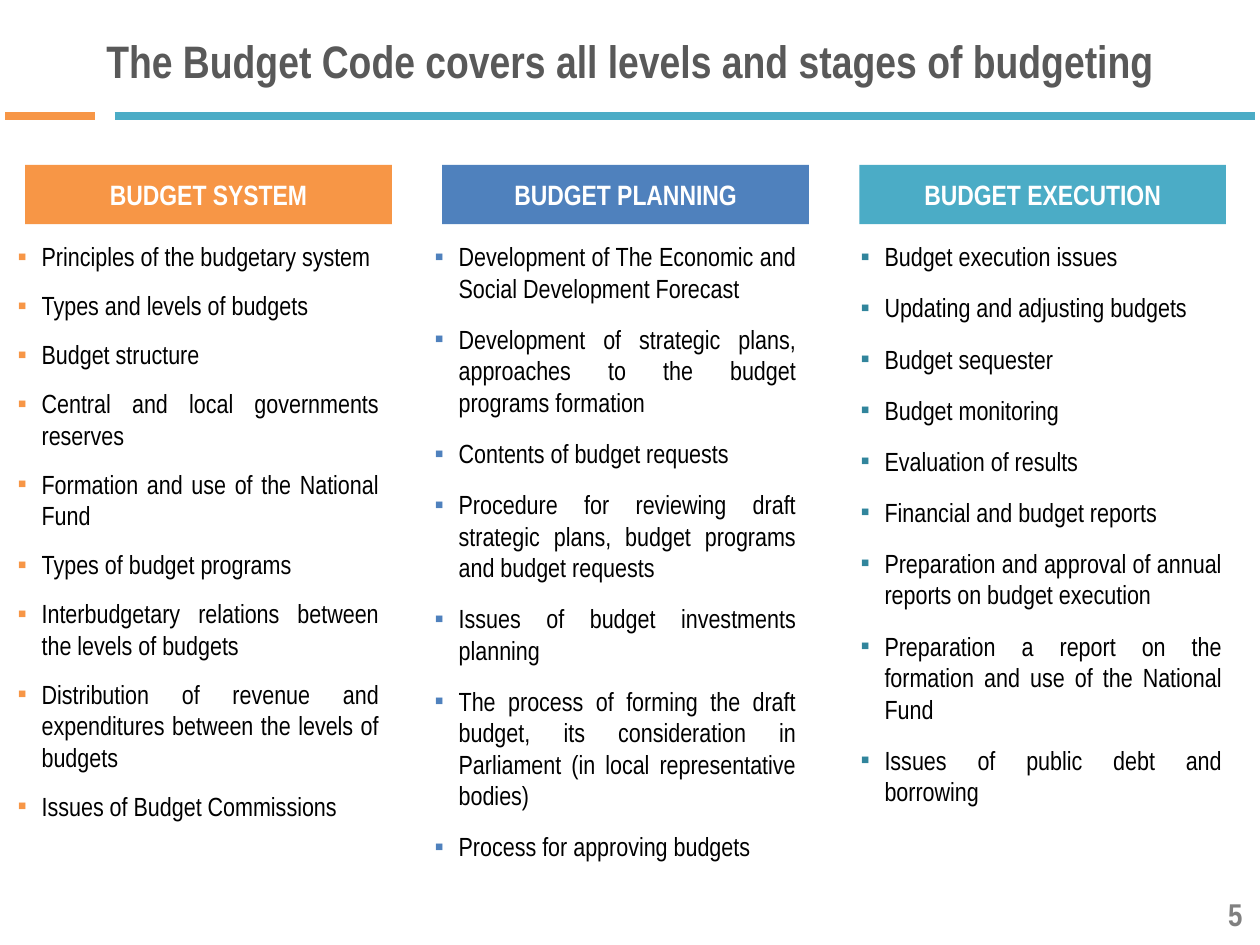
from lxml.etree import SubElement
from pptx import Presentation
from pptx.dml.color import RGBColor
from pptx.enum.shapes import MSO_CONNECTOR as Conn, MSO_SHAPE as Shape
from pptx.enum.text import MSO_ANCHOR as Anchor, MSO_AUTO_SIZE as Fit, PP_ALIGN as Align
from pptx.oxml.ns import qn
from pptx.util import Inches, Pt

FONT = "Arial Narrow"
ORANGE, BLUE, TEAL = "F79646", "4F81BD", "4BACC6"
LEFT, STEP, WIDTH = 0.2, 3.31, 2.91

# head, fill, bullet colour, list offset from the head, space before, items
COLUMNS = [
    ("BUDGET SYSTEM", ORANGE, ORANGE, -0.16, 0, [
        "Principles of the budgetary system",
        "Types and levels of budgets",
        "Budget structure",
        "Central and local governments reserves",
        "Formation and use of the National Fund",
        "Types of budget programs",
        "Interbudgetary relations between the levels of budgets",
        "Distribution of revenue and expenditures between the levels of budgets",
        "Issues of Budget Commissions",
    ]),
    ("BUDGET PLANNING", BLUE, BLUE, -0.16, 1.2, [
        "Development of The Economic and Social Development Forecast",
        "Development of strategic plans, approaches to the budget programs formation",
        "Contents of budget requests",
        "Procedure for reviewing draft strategic plans, budget programs and budget requests",
        "Issues of budget investments planning",
        "The process of forming the draft budget, its consideration in Parliament "
        "(in local representative bodies)",
        "Process for approving budgets",
    ]),
    ("BUDGET EXECUTION", TEAL, "31859C", -0.09, 1.2, [
        "Budget execution issues",
        "Updating and adjusting budgets",
        "Budget sequester",
        "Budget monitoring",
        "Evaluation of results",
        "Financial and budget reports",
        "Preparation and approval of annual reports on budget execution",
        "Preparation a report on the formation and use of the National Fund",
        "Issues of public debt and borrowing",
    ]),
]


def rgb(code):
    return RGBColor.from_string(code)


def place(shape, x, y, w, h):
    shape.left, shape.top = Inches(x), Inches(y)
    shape.width, shape.height = Inches(w), Inches(h)


def setup(shape, anchor):
    frame = shape.text_frame
    frame.word_wrap = True
    frame.auto_size = Fit.NONE
    frame.vertical_anchor = anchor
    return frame


def write(para, text, size, color, bold, align):
    para.alignment = align
    run = para.add_run()
    run.text = text
    font = run.font
    font.name, font.size, font.bold = FONT, Pt(size), bold
    font.color.rgb = rgb(color)


def add_bullet(para, color):
    props = para._p.get_or_add_pPr()
    props.set("marL", str(Inches(0.19)))
    props.set("indent", str(-Inches(0.19)))
    SubElement(SubElement(props, qn("a:buClr")), qn("a:srgbClr"), val=color)
    SubElement(props, qn("a:buFont"), typeface="Arial")
    SubElement(props, qn("a:buChar"), char="▪")


def add_rule(slide, start, end, y, color):
    line = slide.shapes.add_connector(
        Conn.STRAIGHT, Inches(start), Inches(y), Inches(end), Inches(y))
    line.line.color.rgb = rgb(color)
    line.line.width = Pt(4.5)
    SubElement(line._element.spPr, qn("a:effectLst"))


def add_header(slide, x, y, w, h):
    # Title
    title = slide.shapes.title
    place(title, x, y, w, h)
    para = setup(title, Anchor.MIDDLE).paragraphs[0]
    para.space_after = Pt(6)
    write(para, "The Budget Code covers all levels and stages of budgeting",
          26, "595959", True, Align.CENTER)
    # Two-colour rule under the title
    base = y + h + 0.1
    add_rule(slide, x + 0.71, x + 9.76, base, TEAL)
    add_rule(slide, x - 0.16, x + 0.55, base, ORANGE)


def add_column(slide, body, x, y, w, column):
    head, fill, mark, shift, before, items = column
    # Heading bar
    bar = slide.shapes.add_shape(
        Shape.RECTANGLE, Inches(x), Inches(y), Inches(w), Inches(0.47))
    bar.shadow.inherit = False
    bar.fill.solid()
    bar.fill.fore_color.rgb = rgb(fill)
    bar.line.fill.background()
    para = setup(bar, Anchor.MIDDLE).paragraphs[0]
    write(para, head, 16, "FFFFFF", True, Align.CENTER)
    # Bulleted list
    place(body, x + shift, y + 0.55, w + 0.16, 5.4)
    frame = setup(body, Anchor.TOP)
    for i, item in enumerate(items):
        para = frame.add_paragraph() if i else frame.paragraphs[0]
        add_bullet(para, mark)
        para.space_before = Pt(before if i else 0)
        para.space_after = Pt(10)
        write(para, item, 15, "000000", False, Align.JUSTIFY)


def add_number(slide, x, y, w, h):
    box = slide.shapes.add_textbox(Inches(x), Inches(y), Inches(w), Inches(h))
    para = setup(box, Anchor.MIDDLE).paragraphs[0]
    write(para, "5", 18, "808080", True, Align.RIGHT)


def main():
    deck = Presentation()
    deck.slide_width, deck.slide_height = Inches(10), Inches(7.5)
    slide = deck.slides.add_slide(deck.slide_layouts.get_by_name("Comparison"))
    add_header(slide, LEFT, 0.13, 9.61, 0.69)
    # The layout has four bodies; three hold the lists
    *bodies, spare = list(slide.placeholders)[1:]
    spare._element.getparent().remove(spare._element)
    for i, (body, column) in enumerate(zip(bodies, COLUMNS)):
        add_column(slide, body, LEFT + i * STEP, 1.31, WIDTH, column)
    add_number(slide, 7.63, 7.05, 2.33, 0.4)
    deck.save("out.pptx")


if __name__ == "__main__":
    main()
